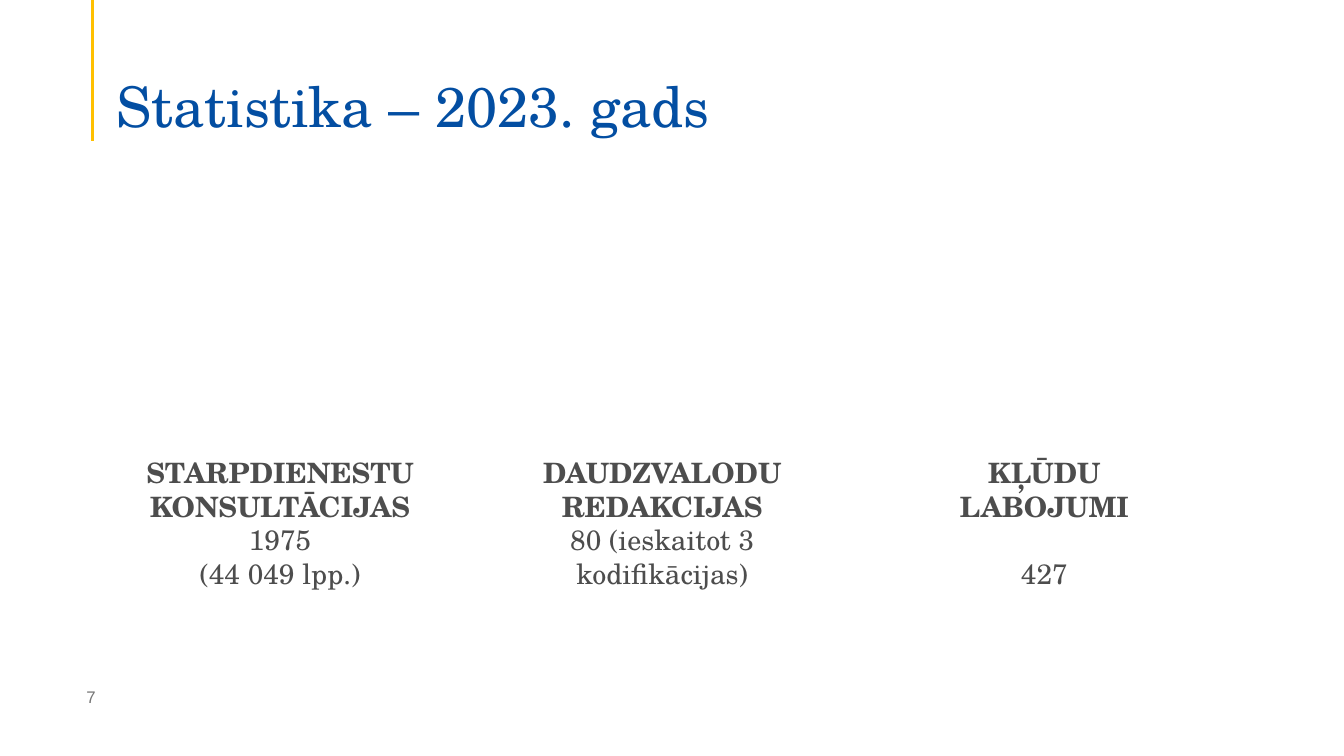
import pptx
import pptx.dml.color
import pptx.enum.shapes
import pptx.enum.text
import pptx.util
from lxml import etree
from pptx.util import Cm

TITLE = "Statistika – 2023. gads"
PAGE_NUMBER = "7"
STATISTICS = [
    {"heading": "STARPDIENESTU KONSULTĀCIJAS", "values": ["1975", "(44 049 lpp.)"], "gap": 0},
    {"heading": "DAUDZVALODU REDAKCIJAS", "values": ["80 (ieskaitot 3 kodifikācijas)"], "gap": 0},
    {"heading": "KĻŪDU LABOJUMI", "values": ["427"], "gap": 24},
]
SERIF = "TeX Gyre Schola"
BLUE, GOLD, DARK, GREY, WHITE = "034EA2", "FFC000", "4D4D4D", "767676", "FFFFFF"
COLUMN_LEFT, COLUMN_PITCH, COLUMN_TOP = 3.35, 9.63, 11.23
COLUMN_WIDTH, COLUMN_HEIGHT = 7.42, 4.24
ALIGN = pptx.enum.text.PP_ALIGN
ANCHOR = pptx.enum.text.MSO_ANCHOR


def color(value):
    return pptx.dml.color.RGBColor.from_string(value)


def write(paragraph, text, size=20, font=SERIF, fill=DARK, bold=False,
          align=ALIGN.LEFT, before=0, spacing=1.0):
    paragraph.alignment = align
    paragraph.line_spacing = spacing
    paragraph.space_before = pptx.util.Pt(before)
    run = paragraph.add_run()
    run.text = text
    run.font.size = pptx.util.Pt(size)
    run.font.name = font
    run.font.bold = bold
    run.font.color.rgb = color(fill)


def prepare_frame(shape, anchor, top=0.25, bottom=0.13):
    frame = shape.text_frame
    frame.word_wrap = True
    frame.vertical_anchor = anchor
    frame.margin_left = frame.margin_right = Cm(0.25)
    frame.margin_top, frame.margin_bottom = Cm(top), Cm(bottom)
    return frame


def add_accent_line(slide):
    line = slide.shapes.add_connector(
        pptx.enum.shapes.MSO_CONNECTOR.STRAIGHT, Cm(2.34), Cm(0), Cm(2.34), Cm(3.56))
    line.line.color.rgb = color(GOLD)
    line.line.width = pptx.util.Pt(2.25)
    etree.SubElement(line._element.spPr, pptx.oxml.ns.qn("a:effectLst"))


def add_statistic(slide, index, statistic):
    card = slide.shapes.add_shape(
        pptx.enum.shapes.MSO_SHAPE.RECTANGLE, Cm(COLUMN_LEFT + index * COLUMN_PITCH),
        Cm(COLUMN_TOP), Cm(COLUMN_WIDTH), Cm(COLUMN_HEIGHT))
    card.shadow.inherit = False
    card.fill.solid()
    card.fill.fore_color.rgb = color(WHITE)
    card.line.fill.background()
    frame = prepare_frame(card, ANCHOR.TOP)
    write(frame.paragraphs[0], statistic["heading"], bold=True, align=ALIGN.CENTER)
    for value in statistic["values"]:
        write(frame.add_paragraph(), value, align=ALIGN.CENTER, before=statistic["gap"])


def main():
    """Build the 2023 statistics slide."""
    presentation = pptx.Presentation()
    presentation.slide_width, presentation.slide_height = Cm(33.87), Cm(19.05)
    slide = presentation.slides.add_slide(presentation.slide_layouts[6])
    add_accent_line(slide)
    number = slide.shapes.add_textbox(Cm(1.93), Cm(17.04), Cm(7.62), Cm(1.02))
    write(prepare_frame(number, ANCHOR.MIDDLE, top=0.13).paragraphs[0],
          PAGE_NUMBER, size=12, font="Arial", fill=GREY)
    title = slide.shapes.add_textbox(Cm(2.69), Cm(1.35), Cm(29.21), Cm(2.18))
    write(prepare_frame(title, ANCHOR.BOTTOM, top=0.13, bottom=0).paragraphs[0],
          TITLE, size=40, fill=BLUE, spacing=0.9)
    for index, statistic in enumerate(STATISTICS):
        add_statistic(slide, index, statistic)
    presentation.save("out.pptx")


if __name__ == "__main__":
    main()
